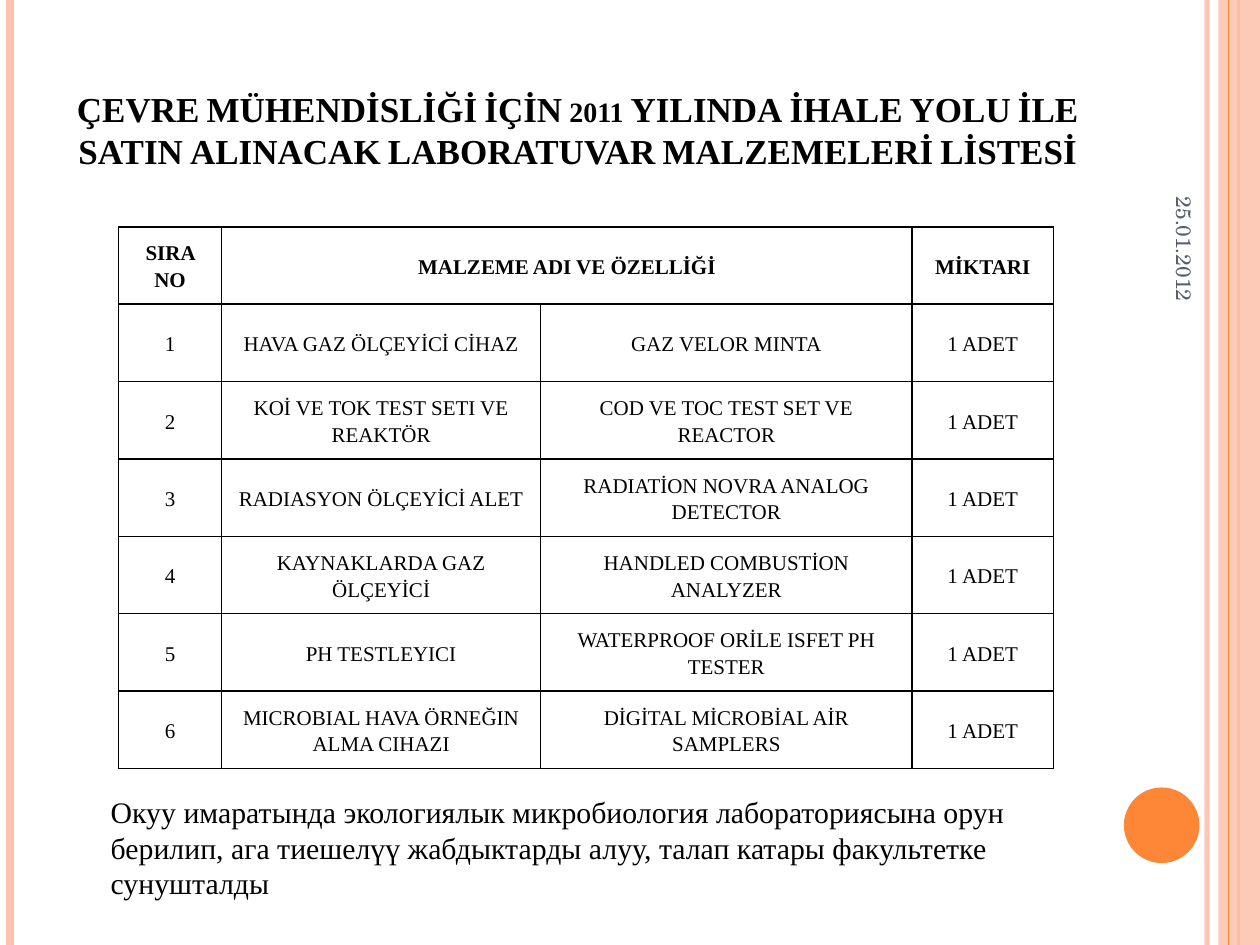
from dataclasses import dataclass

from lxml import etree
from pptx import Presentation
from pptx.dml.color import RGBColor
from pptx.enum.shapes import MSO_CONNECTOR, MSO_SHAPE
from pptx.enum.text import MSO_ANCHOR, PP_ALIGN
from pptx.oxml.ns import qn
from pptx.util import Inches, Pt

STRAIGHT = MSO_CONNECTOR.STRAIGHT
RECTANGLE, OVAL = MSO_SHAPE.RECTANGLE, MSO_SHAPE.OVAL
TOP, MIDDLE, BOTTOM = MSO_ANCHOR.TOP, MSO_ANCHOR.MIDDLE, MSO_ANCHOR.BOTTOM
LEFT, CENTER, RIGHT = PP_ALIGN.LEFT, PP_ALIGN.CENTER, PP_ALIGN.RIGHT

SLIDE_WIDTH, SLIDE_HEIGHT = 10, 7.5
TITLE = ("ÇEVRE MÜHENDİSLİĞİ İÇİN 2011 YILINDA İHALE YOLU İLE "
         "SATIN ALINACAK LABORATUVAR MALZEMELERİ LİSTESİ")
NOTE = ("Окуу имаратында экологиялык микробиология лабораториясына орун берилип, "
        "ага тиешелүү жабдыктарды алуу, талап катары факультетке сунушталды")
HEADER = ["SIRA NO", "MALZEME ADI VE ÖZELLİĞİ", "", "MİKTARI"]
MATERIALS = [
    ("HAVA GAZ ÖLÇEYİCİ CİHAZ", "GAZ VELOR MINTA"),
    ("KOİ VE TOK TEST SETI VE REAKTÖR", "COD VE TOC TEST SET VE REACTOR"),
    ("RADIASYON ÖLÇEYİCİ ALET", "RADIATİON NOVRA ANALOG DETECTOR"),
    ("KAYNAKLARDA GAZ ÖLÇEYİCİ", "HANDLED COMBUSTİON ANALYZER"),
    ("PH TESTLEYICI", "WATERPROOF ORİLE ISFET PH TESTER"),
    ("MICROBIAL HAVA ÖRNEĞIN ALMA CIHAZI", "DİGİTAL MİCROBİAL AİR SAMPLERS"),
]
COLUMN_WIDTHS = [0.82, 2.53, 2.95, 1.12]


@dataclass(frozen=True)
class Theme:
    text: str = "000000"
    date: str = "575F6D"
    accent: str = "FE8637"
    pale: str = "FEC3AE"
    font: str = "Times New Roman"
    date_font: str = "TeX Gyre Schola"
    title_size: float = 20
    note_size: float = 17
    small_size: float = 12


class SlideBuilder:
    def __init__(self, slide, theme):
        self.slide = slide
        self.theme = theme

    def set_alpha(self, element, percent):
        """Make every solid colour inside the element partly transparent."""
        for color in element.iter(qn("a:srgbClr")):
            etree.SubElement(color, qn("a:alpha"), val=str(percent * 1000))

    def style_paragraph(self, paragraph, size, align, bold=False, color=None, font=None):
        paragraph.alignment = align
        paragraph.font.size = Pt(size)
        paragraph.font.bold = bold
        paragraph.font.name = font or self.theme.font
        paragraph.font.color.rgb = RGBColor.from_string(color or self.theme.text)

    def vertical_line(self, x, color, width, alpha=100):
        line = self.slide.shapes.add_connector(
            STRAIGHT, Inches(x), Inches(0), Inches(x), Inches(SLIDE_HEIGHT))
        line.line.color.rgb = RGBColor.from_string(color)
        line.line.width = Pt(width)
        properties = line._element.spPr
        if alpha < 100:
            self.set_alpha(properties, alpha)
        etree.SubElement(properties, qn("a:effectLst"))

    def shape(self, kind, box, color, alpha=100):
        shape = self.slide.shapes.add_shape(kind, *map(Inches, box))
        shape.shadow.inherit = False
        shape.fill.solid()
        shape.fill.fore_color.rgb = RGBColor.from_string(color)
        shape.line.fill.background()
        if alpha < 100:
            self.set_alpha(shape._element.spPr, alpha)

    def text(self, box, text, size, align=LEFT, anchor=TOP, rotation=0, margin=0.1, **style):
        shape = self.slide.shapes.add_textbox(*map(Inches, box))
        shape.rotation = rotation
        frame = shape.text_frame
        frame.word_wrap = True
        frame.vertical_anchor = anchor
        frame.margin_left = frame.margin_right = Inches(margin)
        paragraph = frame.paragraphs[0]
        paragraph.text = text
        self.style_paragraph(paragraph, size, align, **style)
        return paragraph

    def cell(self, cell, text, bold):
        cell.margin_left = cell.margin_right = Inches(0.07)
        cell.margin_top = cell.margin_bottom = 0
        cell.vertical_anchor = MIDDLE
        properties = cell._tc.get_or_add_tcPr()
        for side in ("a:lnL", "a:lnR", "a:lnT", "a:lnB"):
            border = etree.SubElement(properties, qn(side), w=str(Pt(1)))
            fill = etree.SubElement(border, qn("a:solidFill"))
            etree.SubElement(fill, qn("a:srgbClr"), val=self.theme.text)
        cell.fill.background()
        paragraph = cell.text_frame.paragraphs[0]
        paragraph.text = text
        paragraph.line_spacing = 1.15
        self.style_paragraph(paragraph, self.theme.small_size, CENTER, bold)

    def table(self, box, rows, column_widths):
        """Draw a bordered table whose first row is bold."""
        table = self.slide.shapes.add_table(
            len(rows), len(column_widths), *map(Inches, box)).table
        table.first_row = table.horz_banding = False
        for column, width in zip(table.columns, column_widths):
            column.width = Inches(width)
        for row_index, values in enumerate(rows):
            table.rows[row_index].height = Inches(box[3] / len(rows))
            for column_index, value in enumerate(values):
                self.cell(table.cell(row_index, column_index), value, row_index == 0)
        return table


def main():
    presentation = Presentation()
    presentation.slide_width = Inches(SLIDE_WIDTH)
    presentation.slide_height = Inches(SLIDE_HEIGHT)
    theme = Theme()
    builder = SlideBuilder(presentation.slides.add_slide(presentation.slide_layouts[6]), theme)

    builder.vertical_line(9.58, theme.pale, 3, alpha=93)
    builder.vertical_line(0.08, theme.pale, 4.5)
    builder.vertical_line(9.83, theme.accent, 1.5)
    builder.shape(RECTANGLE, (9.67, 0, 0.33, SLIDE_HEIGHT), theme.pale, alpha=87)
    builder.vertical_line(9.75, theme.accent, 0.75)
    builder.shape(OVAL, (8.92, 6.25, 0.6, 0.6), theme.accent)

    title = builder.text((0.5, 0.3, 8.17, 1.11), TITLE, theme.title_size, CENTER, BOTTOM,
                         margin=0.05, bold=True)
    title.font._element.set("cap", "small")

    rows = [HEADER] + [[str(number), *names, "1 ADET"]
                       for number, names in enumerate(MATERIALS, start=1)]
    table = builder.table((0.94, 1.8, sum(COLUMN_WIDTHS), 4.3), rows, COLUMN_WIDTHS)
    table.cell(0, 1).merge(table.cell(0, 2))

    builder.text((0.78, 6.25, 7.81, 0.96), NOTE, theme.note_size)
    builder.text((8.3, 1.18, 2.2, 0.42), "25.01.2012", theme.small_size, RIGHT, MIDDLE,
                 rotation=90, color=theme.date, font=theme.date_font)
    presentation.save("out.pptx")


if __name__ == "__main__":
    main()
